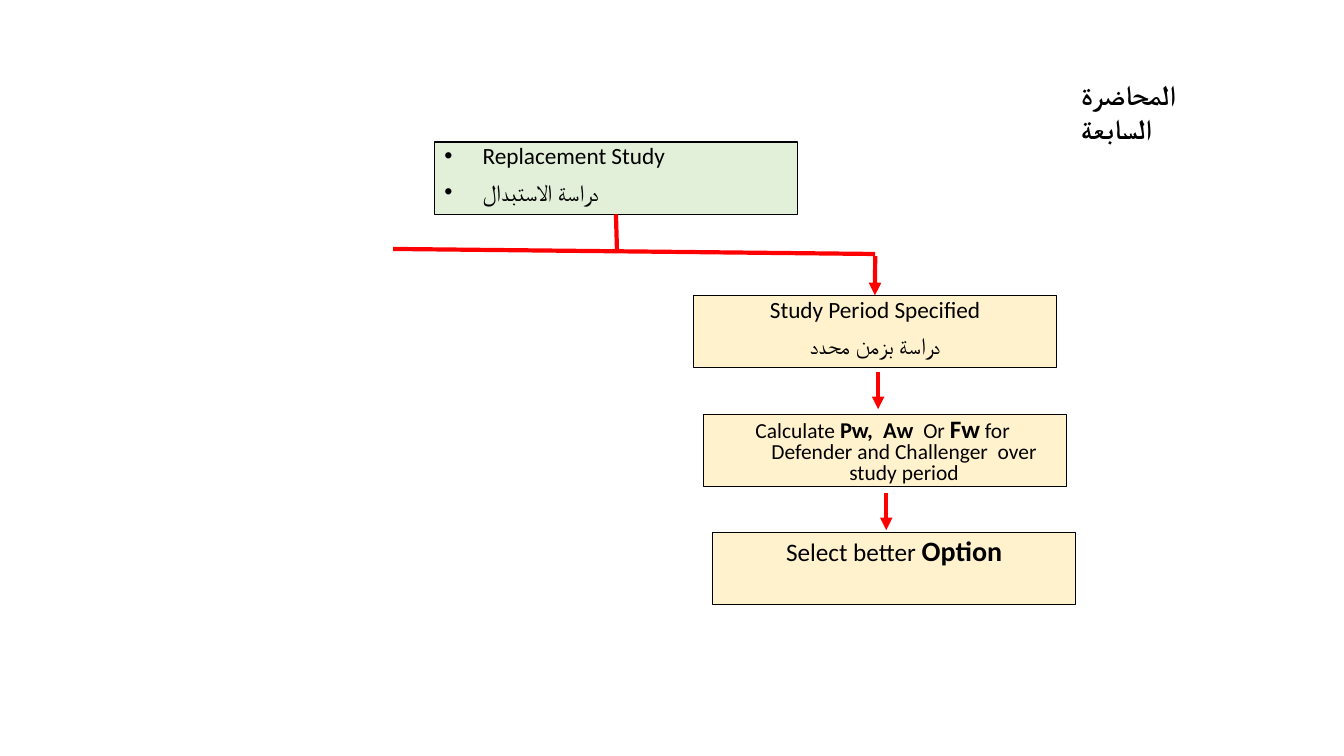
from lxml.etree import SubElement
from pptx import Presentation
from pptx.dml.color import RGBColor
from pptx.enum.shapes import MSO_CONNECTOR as Connector, MSO_SHAPE as Shape
from pptx.enum.text import MSO_ANCHOR as Anchor, MSO_AUTO_SIZE as AutoSize, PP_ALIGN as Align
from pptx.oxml.ns import qn
from pptx.util import Inches, Pt

BLACK, RED, GREEN, CREAM = "000000", "FF0000", "E2F0D9", "FFF2CC"
BOX_WIDTH, BOX_HEIGHT = 27, 9.55
ARROW_LENGTH = 4.93
TOP, BOTTOM = 0, 2


def color(value):
    return RGBColor.from_string(value)


def write(para, text, size, font="Calibri", bold=False):
    span = para.add_run()
    span.text = text
    span.font.size, span.font.name, span.font.bold = Pt(size), font, bold
    span.font.color.rgb = color(BLACK)


def hang(para, bullet=None):
    """Give the paragraph a hanging indent, with a bullet if one is named."""
    properties = para._p.get_or_add_pPr()
    properties.set("marL", str(Inches(0.38)))
    properties.set("indent", str(-Inches(0.38)))
    if bullet:
        SubElement(properties, qn("a:buFont")).set("typeface", "Arial")
        SubElement(properties, qn("a:buChar")).set("char", bullet)
    else:
        SubElement(properties, qn("a:buNone"))


class Flowchart:
    """Draws on one slide; every position is a percentage of the slide's size."""

    def __init__(self, deck):
        self.deck = deck
        self.slide = deck.slides.add_slide(deck.slide_layouts[5])

    def place(self, left, top):
        return int(self.deck.slide_width * left / 100), int(self.deck.slide_height * top / 100)

    def title(self, text, left, top, width, height):
        title = self.slide.shapes.title
        title.left, title.top = self.place(left, top)
        title.width, title.height = self.place(width, height)
        frame = title.text_frame
        frame.word_wrap, frame.auto_size = True, AutoSize.NONE
        frame.vertical_anchor = Anchor.TOP
        para = frame.paragraphs[0]
        para.alignment = Align.LEFT
        write(para, text, 20, font="Arial", bold=True)

    def box(self, left, top, paragraphs, fill=CREAM, align=Align.CENTER, spacing=0.8, bullet=None):
        """Each paragraph is a list of (text, size, bold) spans."""
        box = self.slide.shapes.add_shape(
            Shape.RECTANGLE, *self.place(left, top), *self.place(BOX_WIDTH, BOX_HEIGHT))
        box.shadow.inherit = False
        box.fill.solid()
        box.fill.fore_color.rgb = color(fill)
        box.line.color.rgb = color(BLACK)
        box.line.width = Pt(1)
        frame = box.text_frame
        frame.word_wrap, frame.vertical_anchor = True, Anchor.TOP
        for index, spans in enumerate(paragraphs):
            para = frame.add_paragraph() if index else frame.paragraphs[0]
            hang(para, bullet)
            para.alignment, para.line_spacing = align, spacing
            if index:
                para.space_before = Pt(10)
            for text, size, bold in spans:
                write(para, text, size, bold=bold)
        return box

    def line(self, start, end, arrow=False):
        line = self.slide.shapes.add_connector(
            Connector.STRAIGHT, *self.place(*start), *self.place(*end))
        line.line.color.rgb = color(RED)
        line.line.width = Pt(3)
        if arrow:
            SubElement(line.line._get_or_add_ln(), qn("a:tailEnd")).set("type", "triangle")
        SubElement(line._element.spPr, qn("a:effectLst"))
        return line

    def arrow_down(self, left, top):
        return self.line((left, top), (left, top + ARROW_LENGTH), arrow=True)


def main():
    deck = Presentation()
    deck.slide_width, deck.slide_height = Inches(13.33), Inches(7.5)
    chart = Flowchart(deck)
    chart.title("المحاضرة السابعة", 79.67, 9.6, 14.33, 5.87)

    study = chart.box(32.33, 18.8, [[("Replacement Study", 16.6, False)],
                                    [("دراسة الاستبدال", 16.6, False)]],
                      fill=GREEN, align=Align.LEFT, bullet="•")
    period = chart.box(51.6, 39.07, [[("Study Period Specified", 16.6, False)],
                                     [("دراسة بزمن محدد", 16.6, False)]])
    chart.box(52.35, 54.8, [[("Calculate ", 15.3, False), ("Pw,  Aw", 16.1, True),
                             ("  Or ", 15.3, False), ("Fw", 17.9, True),
                             (" for  Defender and Challenger  over study period", 15.3, False)]])
    chart.box(53.03, 70.4, [[("Select better ", 18, False), ("Option", 20, True)]], spacing=0.9)

    chart.line((45.84, 28.4), (45.91, 33.33)).begin_connect(study, BOTTOM)
    chart.line((29.26, 32.93), (65.12, 33.6))
    chart.arrow_down(65.12, 33.87).end_connect(period, TOP)
    chart.arrow_down(65.34, 49.2)
    chart.arrow_down(65.94, 65.2)
    deck.save("out.pptx")


if __name__ == "__main__":
    main()
